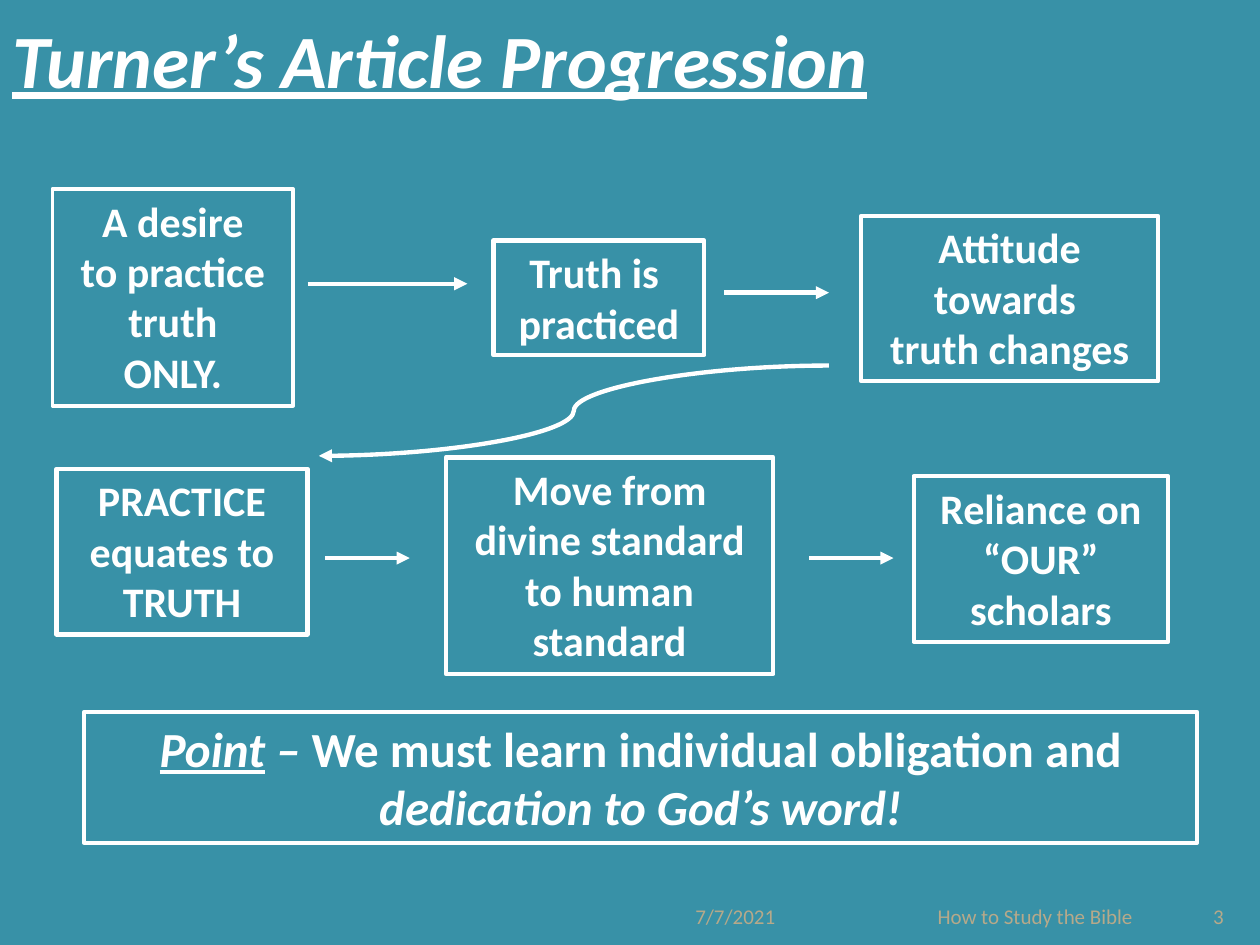
import pptx
import pptx.util
import pptx.dml.color
import pptx.enum.shapes
import pptx.enum.text
import pptx.oxml
import pptx.oxml.ns

Cm = pptx.util.Cm
Pt = pptx.util.Pt
Align = pptx.enum.text.PP_ALIGN
Anchor = pptx.enum.text.MSO_ANCHOR
Link = pptx.enum.shapes.MSO_CONNECTOR

COLORS = {"back": "3891A7", "ink": "FFFFFF", "foot": "B6A98A"}


class Deck:
    font = "Calibri"

    def __init__(self, width, height):
        self.file = pptx.Presentation()
        self.file.slide_width = Cm(width)
        self.file.slide_height = Cm(height)
        self.slide = self.file.slides.add_slide(self.file.slide_layouts[6])
        self.paint(self.slide.background.fill, "back")

    def color(self, name):
        return pptx.dml.color.RGBColor.from_string(COLORS[name])

    def paint(self, fill, name):
        fill.solid()
        fill.fore_color.rgb = self.color(name)

    def style(self, run, size, color="ink", marks=""):
        font = run.font
        font.name = self.font
        font.size = Pt(size)
        font.color.rgb = self.color(color)
        font.bold = "b" in marks
        font.italic = "i" in marks
        font.underline = "u" in marks

    def label(self, area, text, size, color, marks, align, anchor, inset=0.25):
        frame = self.slide.shapes.add_textbox(*map(Cm, area)).text_frame
        frame.word_wrap = True
        frame.vertical_anchor = anchor
        frame.margin_left = Cm(inset)
        frame.text = text
        line = frame.paragraphs[0]
        line.alignment = align
        self.style(line.runs[0], size, color, marks)

    def box(self, area, lines, size=24, width=2.5):
        rect = pptx.enum.shapes.MSO_SHAPE.RECTANGLE
        shape = self.slide.shapes.add_shape(rect, *map(Cm, area))
        shape.shadow.inherit = False
        shape.fill.background()
        self.paint(shape.line.fill, "ink")
        shape.line.width = Pt(width)
        frame = shape.text_frame
        frame.word_wrap = False
        frame.auto_size = pptx.enum.text.MSO_AUTO_SIZE.SHAPE_TO_FIT_TEXT
        frame.vertical_anchor = Anchor.TOP
        for i, parts in enumerate(lines):
            line = frame.add_paragraph() if i else frame.paragraphs[0]
            line.alignment = Align.CENTER
            for text, marks in parts:
                run = line.add_run()
                run.text = text
                self.style(run, size, marks=marks)

    def arrow(self, start, end, kind=Link.STRAIGHT):
        link = self.slide.shapes.add_connector(kind, *map(Cm, start + end))
        self.paint(link.line.fill, "ink")
        link.line.width = Pt(2.5)
        props = link._element.spPr
        tip = pptx.oxml.parse_xml(
            f'<a:tailEnd {pptx.oxml.ns.nsdecls("a")} type="triangle"/>')
        props.find(pptx.oxml.ns.qn("a:ln")).append(tip)
        props.append(pptx.oxml.parse_xml(
            f'<a:effectLst {pptx.oxml.ns.nsdecls("a")}/>'))


STEPS = [
    ((1.06, 3.81, 4.85, 4.37), 2.25, ["A desire", "to practice", "truth", "ONLY."]),
    ((9.95, 4.85, 4.25, 2.31), 2.5, ["Truth is ", "practiced"]),
    ((17.36, 4.35, 5.99, 3.34), 2.25, ["Attitude", "towards ", "truth changes"]),
    ((1.14, 9.45, 5.06, 3.34), 2.5, ["PRACTICE", "equates to", "TRUTH"]),
    ((8.99, 9.22, 6.6, 4.37), 2.5,
     ["Move from", "divine standard", "to human", "standard"]),
    ((18.42, 9.6, 5.13, 3.34), 2.5, ["Reliance on", "“OUR”", "scholars"]),
]
POINT = [
    [("Point", "biu"), (" – ", "bi"),
     ("We must learn individual obligation and", "b")],
    [("dedication to God’s word!", "bi")],
]
ARROWS = [(6.2, 9.42, 5.72), (14.6, 16.71, 5.9),
          (6.55, 8.26, 11.25), (16.31, 18.01, 11.25)]
FOOT = [
    (9.96, 5.92, "7/7/2021", Align.RIGHT, 0.25),
    (15.88, 8.05, "How to Study the Bible", Align.LEFT, 3.02),
    (23.93, 1.27, "3", Align.CENTER, 0.25),
]


def main():
    deck = Deck(25.4, 19.05)
    deck.label((0, 0, 18.87, 2.34), "Turner’s Article Progression",
               43, "ink", "biu", Align.LEFT, Anchor.MIDDLE)
    for left, width, text, align, inset in FOOT:
        deck.label((left, 17.53, width, 1.32), text, 12, "foot", "",
                   align, Anchor.BOTTOM, inset)
    for area, width, lines in STEPS:
        deck.box(area, [[(text, "b")] for text in lines], width=width)
    deck.box((1.7, 14.35, 22.43, 2.64), POINT, size=28)
    for left, right, top in ARROWS:
        deck.arrow((left, top), (right, top))
    deck.arrow((16.71, 7.37), (6.43, 9.19), Link.CURVE)
    deck.file.save("out.pptx")


if __name__ == "__main__":
    main()
